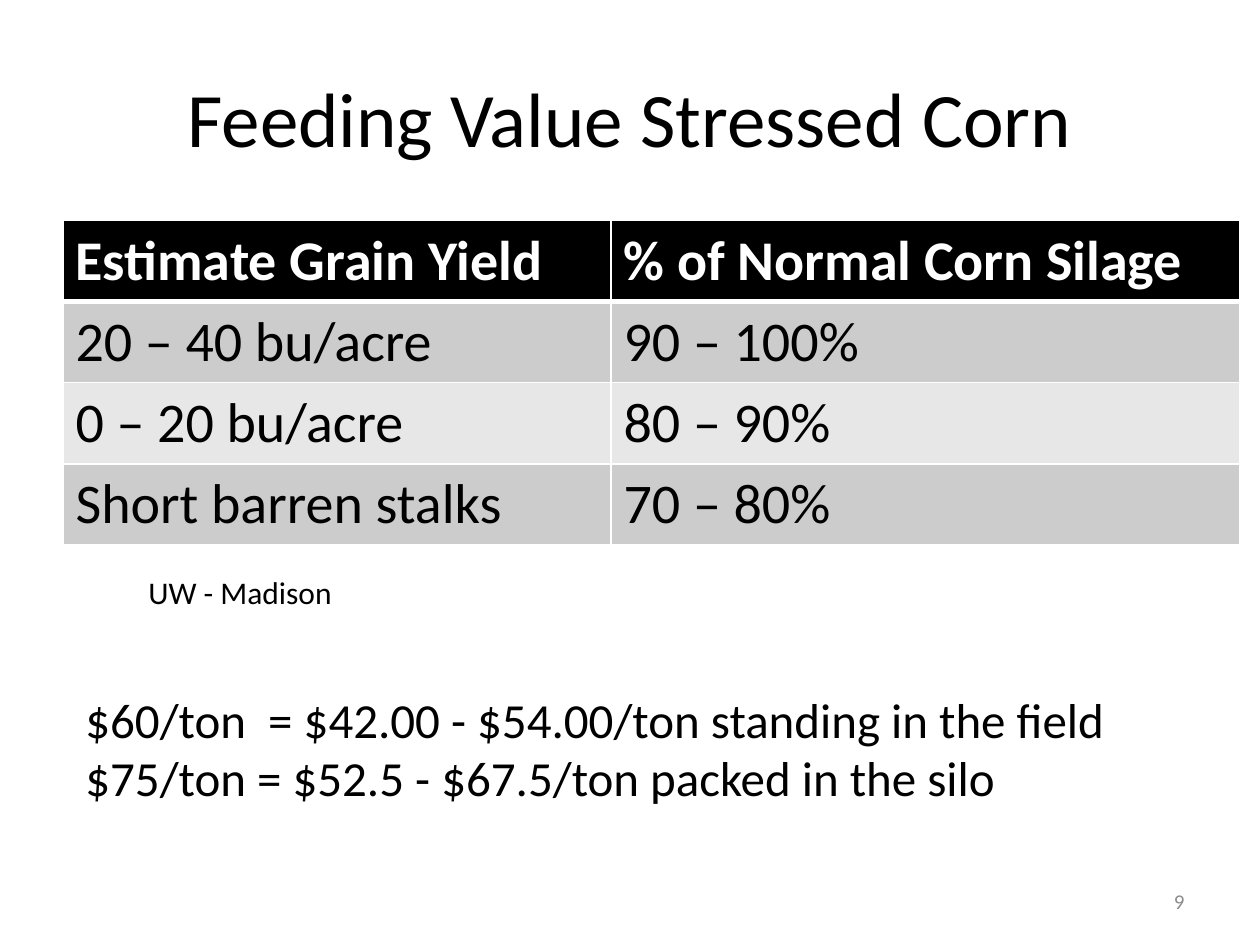
from dataclasses import dataclass

import lxml.etree
import pptx
import pptx.dml.color
import pptx.enum.text
import pptx.oxml.ns
import pptx.util

Inches = pptx.util.Inches
Align = pptx.enum.text.PP_ALIGN
Anchor = pptx.enum.text.MSO_ANCHOR


@dataclass(frozen=True)
class Theme:
    font: str = "Calibri"
    text: str = "000000"
    muted: str = "8C8C8C"
    white: str = "FFFFFF"
    header_fill: str = "000000"
    band_fills: tuple[str, str] = ("CCCCCC", "E7E7E7")
    title_size: int = 44
    table_size: int = 32
    price_size: int = 28
    source_size: int = 18
    number_size: int = 12


@dataclass(frozen=True)
class Note:
    left: float
    top: float
    width: float
    height: float
    lines: tuple[str, ...]
    size: int
    color: str
    align: Align = Align.LEFT
    anchor: Anchor = Anchor.TOP


THEME = Theme()
COLUMN_WIDTHS = (4.35, 4.99)
ROW_HEIGHT = 0.64
YIELD_ROWS = (
    ("Estimate Grain Yield", "% of Normal Corn Silage"),
    ("20 – 40 bu/acre", "90 – 100%"),
    ("0 – 20 bu/acre", "80 – 90%"),
    ("Short barren stalks", "70 – 80%"),
)
NOTES = (
    Note(7.17, 6.95, 2.33, 0.4, ("9",), THEME.number_size, THEME.muted,
         Align.RIGHT, Anchor.MIDDLE),
    Note(1.08, 4.5, 2, 0.42, ("UW - Madison",), THEME.source_size, THEME.text),
    Note(0.58, 5.42, 8.67, 1.04,
         ("$60/ton  = $42.00 - $54.00/ton standing in the field",
          "$75/ton = $52.5 - $67.5/ton packed in the silo"),
         THEME.price_size, THEME.text),
)


def rgb(color: str) -> pptx.dml.color.RGBColor:
    return pptx.dml.color.RGBColor.from_string(color)


def style_paragraph(paragraph, size: int, color: str, align: Align = Align.LEFT,
                    bold: bool = False) -> None:
    paragraph.alignment = align
    paragraph.font.name = THEME.font
    paragraph.font.size = pptx.util.Pt(size)
    paragraph.font.bold = bold
    paragraph.font.color.rgb = rgb(color)


def set_borders(cell, widths: dict[str, int]) -> None:
    """Give the cell white borders; they must come before its fill."""
    properties = cell._tc.get_or_add_tcPr()
    for index, (side, width) in enumerate(widths.items()):
        line = lxml.etree.Element(pptx.oxml.ns.qn(f"a:ln{side}"),
                                  w=str(pptx.util.Pt(width)))
        fill = lxml.etree.SubElement(line, pptx.oxml.ns.qn("a:solidFill"))
        lxml.etree.SubElement(fill, pptx.oxml.ns.qn("a:srgbClr"), val=THEME.white)
        properties.insert(index, line)


def add_title(slide, text: str) -> None:
    title = slide.shapes.title
    title.left, title.top = Inches(0.5), Inches(0.3)
    title.width, title.height = Inches(9), Inches(1.25)
    title.text_frame.text = text
    title.text_frame.vertical_anchor = Anchor.MIDDLE
    style_paragraph(title.text_frame.paragraphs[0], THEME.title_size, THEME.text,
                    Align.CENTER)


def add_yield_table(slide) -> None:
    table = slide.shapes.add_table(
        len(YIELD_ROWS), len(COLUMN_WIDTHS), Inches(0.5), Inches(1.75),
        Inches(sum(COLUMN_WIDTHS)), Inches(ROW_HEIGHT * len(YIELD_ROWS))).table
    for column, width in zip(table.columns, COLUMN_WIDTHS):
        column.width = Inches(width)
    for row_index, row in enumerate(YIELD_ROWS):
        header = row_index == 0
        fill = THEME.header_fill if header else THEME.band_fills[(row_index - 1) % 2]
        for column_index, text in enumerate(row):
            cell = table.cell(row_index, column_index)
            cell.text = text
            cell.fill.solid()
            cell.fill.fore_color.rgb = rgb(fill)
            style_paragraph(cell.text_frame.paragraphs[0], THEME.table_size,
                            THEME.white if header else THEME.text, bold=header)
            set_borders(cell, {"L": 1, "R": 1, "T": 3 if row_index == 1 else 1,
                               "B": 3 if header else 1})


def add_note(slide, note: Note) -> None:
    box = slide.shapes.add_textbox(Inches(note.left), Inches(note.top),
                                   Inches(note.width), Inches(note.height))
    frame = box.text_frame
    frame.word_wrap = True
    frame.vertical_anchor = note.anchor
    frame.text = "\n".join(note.lines)
    for paragraph in frame.paragraphs:
        style_paragraph(paragraph, note.size, note.color, note.align)


def main() -> None:
    presentation = pptx.Presentation()
    presentation.slide_width, presentation.slide_height = Inches(10), Inches(7.5)
    # Title Only layout
    slide = presentation.slides.add_slide(presentation.slide_layouts[5])
    add_title(slide, "Feeding Value Stressed Corn")
    add_yield_table(slide)
    # Page number, source and prices
    for note in NOTES:
        add_note(slide, note)
    presentation.save("out.pptx")


if __name__ == "__main__":
    main()
